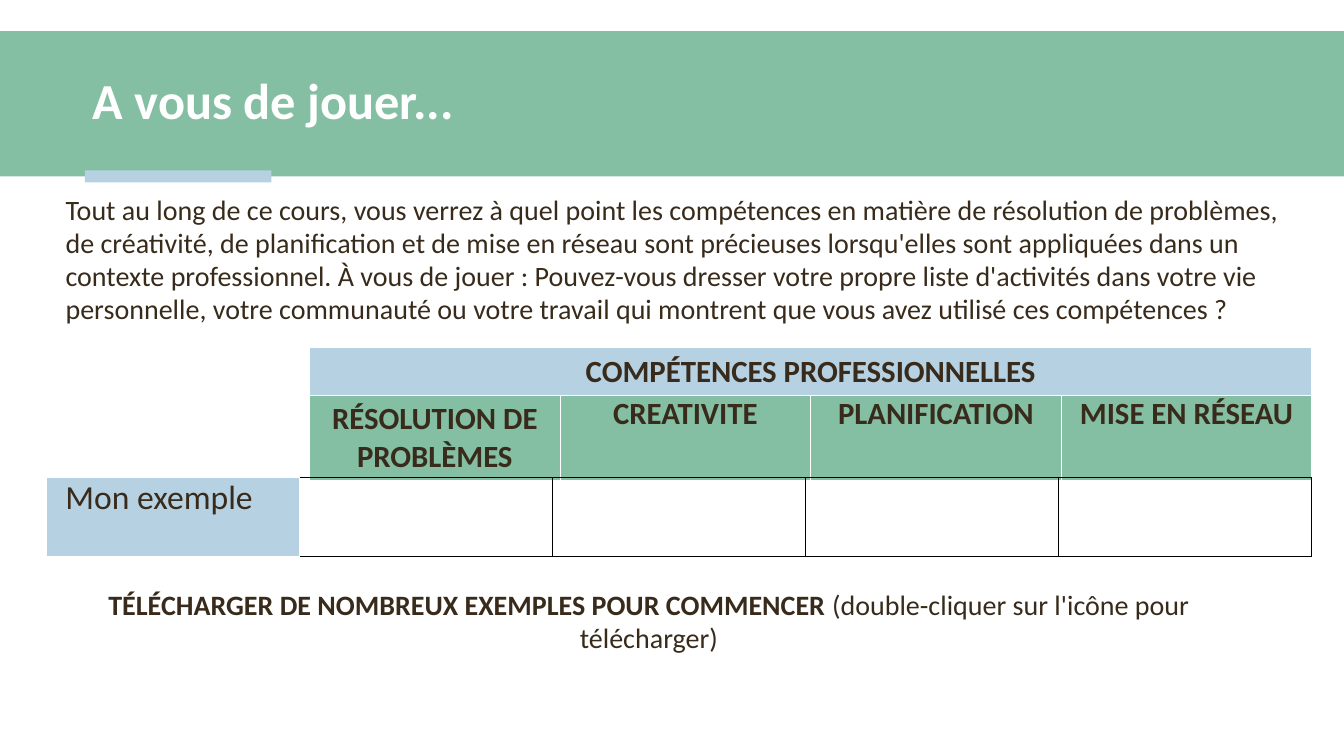
from lxml import etree
from pptx import Presentation
from pptx import util as u
from pptx.dml.color import RGBColor
from pptx.enum import shapes, text
from pptx.oxml import ns

WIDE, HIGH = u.Inches(13.33), u.Inches(7.5)
HUES = {"green": "84BFA4", "blue": "B6D1E1", "ink": "382B1B",
        "white": "FFFFFF", "black": "000000"}
LEAD = u.Pt(23.4)

INTRO = ("Tout au long de ce cours, vous verrez à quel point les compétences en "
         "matière de résolution de problèmes, de créativité, de planification et de "
         "mise en réseau sont précieuses lorsqu'elles sont appliquées dans un contexte "
         "professionnel. À vous de jouer : Pouvez-vous dresser votre propre liste "
         "d'activités dans votre vie personnelle, votre communauté ou votre travail "
         "qui montrent que vous avez utilisé ces compétences ?")
SKILLS = ["RÉSOLUTION DE PROBLÈMES", "CREATIVITE", "PLANIFICATION", "MISE EN RÉSEAU"]


def hue(name):
    return RGBColor.from_string(HUES[name])


def box(left, top, width, height):
    """Turn percentages of the slide into lengths."""
    return [round(share * full / 100) for share, full in
            zip((left, top, width, height), (WIDE, HIGH, WIDE, HIGH))]


def write(frame, words, size=20, color="ink", bold=False, align="LEFT", lead=None):
    """Add one run to the first paragraph of a frame."""
    para = frame.paragraphs[0]
    para.alignment = getattr(text.PP_ALIGN, align)
    para.space_before = u.Pt(0)
    if lead:
        para.line_spacing = lead
    run = para.add_run()
    run.text = words
    font = run.font
    font.name, font.size, font.bold = "Calibri", u.Pt(size), bold
    font.color.rgb = hue(color)


def bar(slide, place, color):
    shape = slide.shapes.add_shape(shapes.MSO_SHAPE.RECTANGLE, *box(*place))
    shape.shadow.inherit = False
    shape.fill.solid()
    shape.fill.fore_color.rgb = hue(color)
    shape.line.fill.background()


def holder(slide, shape, place, anchor):
    """Place a placeholder in front and take away its bullet."""
    shape.left, shape.top, shape.width, shape.height = box(*place)
    slide.shapes._spTree.append(shape._element)
    frame = shape.text_frame
    frame.word_wrap = True
    frame.auto_size = text.MSO_AUTO_SIZE.NONE
    frame.vertical_anchor = anchor
    props = frame.paragraphs[0]._p.get_or_add_pPr()
    props.set("marL", "0")
    props.set("indent", "0")
    etree.SubElement(props, ns.qn("a:buNone"))
    return frame


def grid(slide, place, rows, cols):
    """Add a plain table whose columns are equal."""
    left, top, width, height = box(*place)
    table = slide.shapes.add_table(len(rows), cols, left, top, width, height).table
    table.first_row = table.horz_banding = False
    for row, share in zip(table.rows, rows):
        row.height = round(share * HIGH / 100)
    return table


def paint(cell, fill=None, line="white", left=None):
    """Draw the four borders of a cell, then its fill."""
    props = cell._tc.get_or_add_tcPr()
    for side in "LRTB":
        edge = etree.SubElement(props, ns.qn(f"a:ln{side}"), w="12700")
        solid = etree.SubElement(edge, ns.qn("a:solidFill"))
        color = left if left and side == "L" else line
        etree.SubElement(solid, ns.qn("a:srgbClr"), val=HUES[color])
    if fill:
        cell.fill.solid()
        cell.fill.fore_color.rgb = hue(fill)
    else:
        cell.fill.background()


def skills(slide):
    table = grid(slide, (23.03, 46, 74.57, 17.33), (5.6, 10), len(SKILLS))
    look = dict(size=22, bold=True, align="CENTER")
    for cell in table.iter_cells():
        paint(cell, "green")
    head = table.cell(0, 0)
    head.merge(table.cell(0, len(SKILLS) - 1))
    head.fill.fore_color.rgb = hue("blue")
    write(head.text_frame, "COMPÉTENCES PROFESSIONNELLES", **look)
    for col, name in enumerate(SKILLS):
        cell = table.cell(1, col)
        if col:
            cell.margin_left = cell.margin_right = u.Inches(0.07)
            cell.margin_top = cell.margin_bottom = 0
        write(cell.text_frame, name, **look)


def sample(slide):
    table = grid(slide, (3.45, 63.2, 94.15, 10.4), (10.4,), 5)
    first, *blank = table.iter_cells()
    paint(first, "blue")
    first.margin_left, first.margin_top = u.Inches(0.19), u.Inches(0.08)
    write(first.text_frame, "Mon exemple", size=24, lead=LEAD)
    for col, cell in enumerate(blank):
        paint(cell, line="black", left=None if col else "white")


def main():
    deck = Presentation()
    deck.slide_width, deck.slide_height = WIDE, HIGH
    slide = deck.slides.add_slide(deck.slide_layouts[1])
    title, body = slide.placeholders

    # Header band and title
    bar(slide, (0, 4.13, 100, 19.2), "green")
    bar(slide, (6.32, 22.53, 13.88, 1.6), "blue")
    frame = holder(slide, title, (6.15, 5.47, 57.16, 16.4), text.MSO_ANCHOR.MIDDLE)
    write(frame, "A vous de jouer...", size=36, color="white", bold=True, lead=0.9)

    # Introduction
    frame = holder(slide, body, (4.13, 24.93, 93.47, 19.73), text.MSO_ANCHOR.TOP)
    write(frame, INTRO, lead=LEAD)

    # Tables
    skills(slide)
    sample(slide)

    # Download note
    frame = slide.shapes.add_textbox(*box(4.13, 77.2, 88.3, 17.2)).text_frame
    frame.word_wrap = True
    write(frame, "TÉLÉCHARGER DE NOMBREUX EXEMPLES POUR COMMENCER ",
          bold=True, align="CENTER", lead=LEAD)
    write(frame, "(double-cliquer sur l'icône pour télécharger)",
          align="CENTER", lead=LEAD)

    deck.save("out.pptx")


if __name__ == "__main__":
    main()
